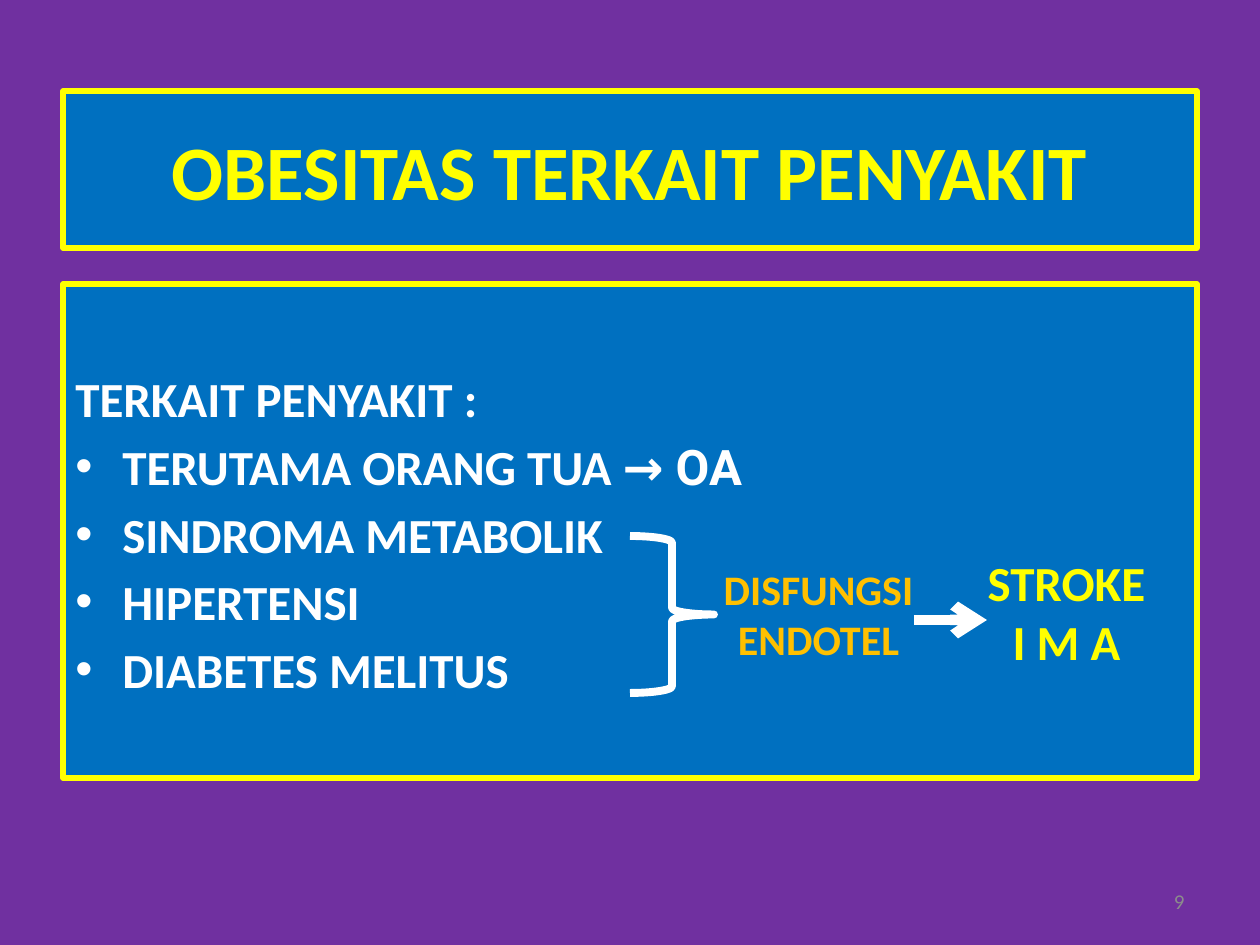
import pptx
import pptx.util
import pptx.dml.color
import pptx.enum.shapes
import pptx.enum.text
import pptx.oxml.ns
import lxml.etree

SCALE = 914400 / 126
COLORS = {
    "purple": "7030A0",
    "blue": "0070C0",
    "yellow": "FFFF00",
    "white": "FFFFFF",
    "orange": "FFC000",
    "gray": "8C8C8C",
}
SHAPES = pptx.enum.shapes.MSO_SHAPE
ALIGN = pptx.enum.text.PP_ALIGN
ANCHOR = pptx.enum.text.MSO_ANCHOR
FIT = pptx.enum.text.MSO_AUTO_SIZE


def px(length):
    return pptx.util.Emu(round(length * SCALE))


def color(name):
    return pptx.dml.color.RGBColor.from_string(COLORS[name])


def add_child(parent, tag, **attributes):
    return lxml.etree.SubElement(parent, pptx.oxml.ns.qn(tag), **attributes)


def write(para, text, size, ink, bold=True, font="Calibri", align=ALIGN.LEFT):
    para.alignment = align
    span = para.add_run()
    span.text = text
    span.font.name = font
    span.font.size = pptx.util.Pt(size)
    span.font.bold = bold
    span.font.color.rgb = color(ink)


def add_panel(page, box):
    panel = page.shapes.add_shape(SHAPES.RECTANGLE, *map(px, box))
    panel.shadow.inherit = False
    panel.fill.solid()
    panel.fill.fore_color.rgb = color("blue")
    panel.line.color.rgb = color("yellow")
    panel.line.width = pptx.util.Pt(3)
    panel.text_frame.word_wrap = True
    return panel.text_frame


def add_label(page, box, lines, size, ink, anchor=ANCHOR.TOP, fit=FIT.NONE, **style):
    frame = page.shapes.add_textbox(*map(px, box)).text_frame
    frame.word_wrap = True
    frame.auto_size = fit
    frame.vertical_anchor = anchor
    for index, line in enumerate(lines):
        para = frame.add_paragraph() if index else frame.paragraphs[0]
        write(para, line, size, ink, **style)


def add_title(page, box):
    frame = add_panel(page, box)
    frame.vertical_anchor = ANCHOR.MIDDLE
    write(frame.paragraphs[0], "OBESITAS TERKAIT PENYAKIT", 44, "yellow", align=ALIGN.CENTER)


def add_disease_list(page, box):
    frame = add_panel(page, box)
    frame.vertical_anchor = ANCHOR.TOP
    frame.margin_top = px(85)
    write(frame.paragraphs[0], "TERKAIT PENYAKIT :", 28, "white")
    items = ["TERUTAMA ORANG TUA ", "SINDROMA METABOLIK", "HIPERTENSI", "DIABETES MELITUS"]
    for index, item in enumerate(items):
        para = frame.add_paragraph()
        para.space_before = pptx.util.Pt(5)
        write(para, item, 28, "white")
        if index == 0:
            write(para, "→ OA", 28, "white", font="Roboto")
        properties = para._p.get_or_add_pPr()
        properties.set("marL", str(px(47)))
        properties.set("indent", str(-px(47)))
        add_child(properties, "a:buFont", typeface="Arial")
        add_child(properties, "a:buChar", char="•")


def add_consequences(page, box):
    left, top, width, height = box
    brace = page.shapes.add_shape(SHAPES.RIGHT_BRACE, px(left), px(top), px(84), px(height))
    brace.shadow.inherit = False
    brace.fill.background()
    brace.line.color.rgb = color("white")
    brace.line.width = pptx.util.Pt(4.5)
    brace.adjustments[0] = 0.08
    brace.adjustments[1] = 0.5

    add_label(page, (left + 73, top + 21, 231, 115), ["DISFUNGSI", "ENDOTEL"], 24, "orange",
              fit=FIT.SHAPE_TO_FIT_TEXT, align=ALIGN.CENTER)

    arrow = page.shapes.add_connector(
        pptx.enum.shapes.MSO_CONNECTOR.STRAIGHT,
        px(left + 284), px(top + 84), px(left + 357), px(top + 84))
    arrow.line.color.rgb = color("white")
    arrow.line.width = pptx.util.Pt(6)
    add_child(arrow.line._get_or_add_ln(), "a:tailEnd", type="arrow")
    add_child(arrow._element.spPr, "a:effectLst")

    add_label(page, (left + width - 199, top + 10, 199, 131), ["STROKE", "I M A"], 28, "yellow",
              fit=FIT.SHAPE_TO_FIT_TEXT, align=ALIGN.CENTER)


def main():
    deck = pptx.Presentation()
    deck.slide_width, deck.slide_height = px(1260), px(945)
    page = deck.slides.add_slide(deck.slide_layouts[6])
    page.background.fill.solid()
    page.background.fill.fore_color.rgb = color("purple")
    add_title(page, (63, 91, 1134, 157))
    add_disease_list(page, (63, 284, 1134, 494))
    add_consequences(page, (630, 536, 536, 157))
    add_label(page, (903, 876, 294, 50), ["9"], 12, "gray",
              anchor=ANCHOR.MIDDLE, bold=False, align=ALIGN.RIGHT)
    deck.save("out.pptx")


if __name__ == "__main__":
    main()
